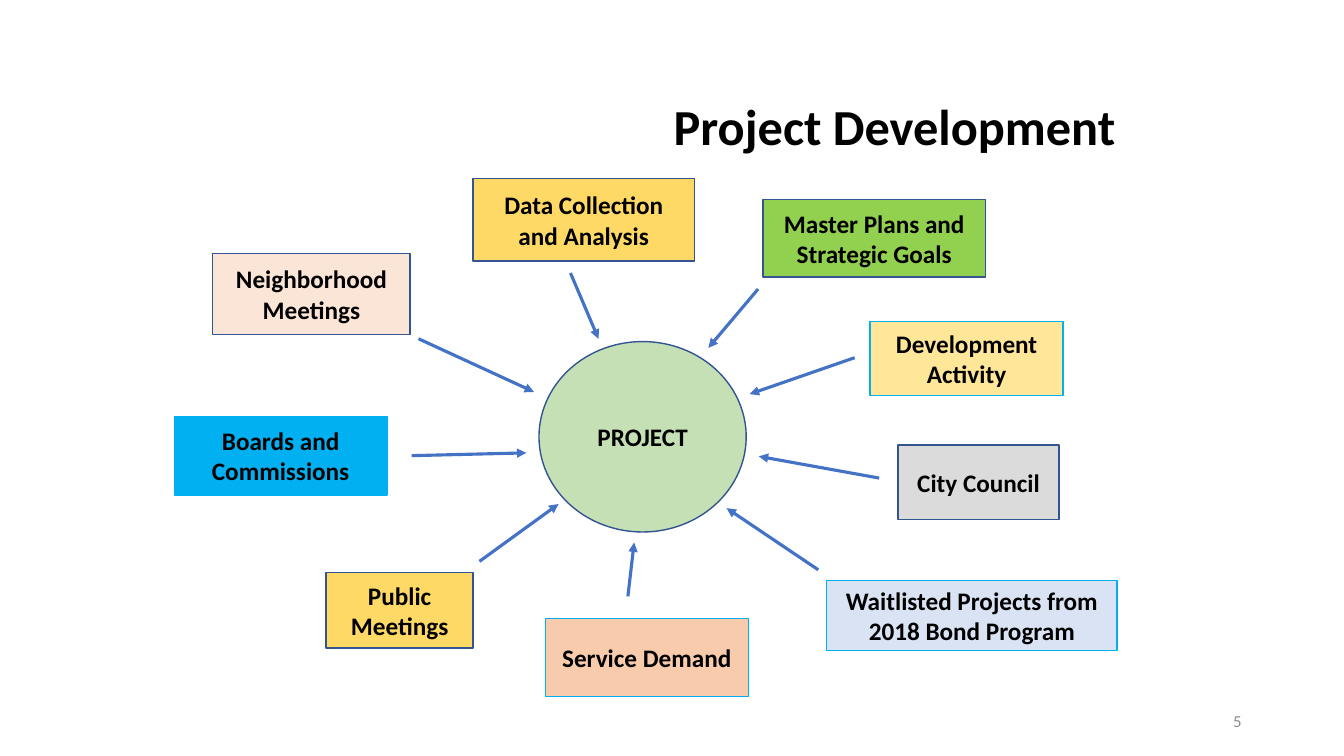
from pptx import Presentation
from pptx.dml.color import RGBColor
from pptx.enum.shapes import MSO_CONNECTOR, MSO_SHAPE
from pptx.enum.text import MSO_ANCHOR, MSO_AUTO_SIZE, PP_ALIGN
from pptx.oxml.ns import qn
from pptx.util import Pt
from lxml.etree import SubElement

NAVY, SKY, BLUE, BLACK = "325491", "00B0F0", "4472C4", "000000"

# Label, fill, outline, box (left, top, width, height), arrow (from x, y, to x, y)
INPUTS = [
    ("Neighborhood Meetings", "FBE5D6", NAVY,
     (28, 54, 141, 58), (175, 115, 257.5, 153)),
    ("Data Collection and Analysis", "FFD966", NAVY,
     (214, 0.5, 158, 59), (283.5, 68, 303.5, 115)),
    ("Master Plans and Strategic Goals", "92D050", NAVY,
     (421, 15.5, 159, 55.5), (417.5, 79.5, 382, 121.5)),
    ("Development Activity", "FFE699", SKY,
     (497.5, 102.5, 138, 53), (486.5, 128.5, 411.5, 154.5)),
    ("City Council", "DBDBDB", NAVY,
     (517.5, 191, 115, 53), (504, 214.5, 418, 199)),
    ("Waitlisted Projects from 2018 Bond Program", "DAE3F3", SKY,
     (466.5, 287.5, 207.5, 50), (460.5, 280, 395, 236)),
    ("Service Demand", "F8CBAD", SKY,
     (265.5, 315, 145, 55.5), (324.5, 299, 329, 260.5)),
    ("Public Meetings", "FFD966", NAVY,
     (109, 282, 105, 54), (218.5, 274, 275, 233)),
    ("Boards and Commissions", SKY, SKY,
     (0.5, 170.5, 152, 56), (170, 198.5, 252, 196.5)),
]
HUB = (261, 117, 148, 136)


def color(code):
    return RGBColor.from_string(code)


def write(frame, text, size, align, code=BLACK, bold=True):
    frame.word_wrap = True
    frame.vertical_anchor = MSO_ANCHOR.MIDDLE
    para = frame.paragraphs[0]
    para.alignment = align
    run = para.add_run()
    run.text = text
    font = run.font
    font.name, font.size, font.bold = "Calibri", Pt(size), bold
    font.color.rgb = color(code)


def node(slide, kind, box, text, fill, edge):
    shape = slide.shapes.add_shape(kind, *map(Pt, box))
    shape.shadow.inherit = False
    shape.fill.solid()
    shape.fill.fore_color.rgb = color(fill)
    shape.line.color.rgb = color(edge)
    shape.line.width = Pt(1)
    write(shape.text_frame, text, 18, PP_ALIGN.CENTER)


def arrow(slide, ends):
    link = slide.shapes.add_connector(MSO_CONNECTOR.STRAIGHT, *map(Pt, ends))
    link.line.color.rgb = color(BLUE)
    link.line.width = Pt(2.25)
    props = link._element.spPr
    SubElement(props.find(qn("a:ln")), qn("a:tailEnd"), type="triangle")
    SubElement(props, qn("a:effectLst"))


def heading(slide, left, top, width, height):
    title = slide.shapes.title
    title.left, title.top = Pt(left), Pt(top)
    title.width, title.height = Pt(width), Pt(height)
    frame = title.text_frame
    frame.auto_size = MSO_AUTO_SIZE.NONE
    write(frame, "Project Development", 36, PP_ALIGN.LEFT)
    frame.vertical_anchor = MSO_ANCHOR.BOTTOM
    frame.paragraphs[0].line_spacing = 0.9


def diagram(slide, left, top):
    # Central project
    x, y, w, h = HUB
    node(slide, MSO_SHAPE.OVAL, (left + x, top + y, w, h),
         "PROJECT", "C5E0B4", NAVY)
    # Inputs around it, each with its arrow
    for text, fill, edge, (x, y, w, h), (x1, y1, x2, y2) in INPUTS:
        node(slide, MSO_SHAPE.RECTANGLE, (left + x, top + y, w, h),
             text, fill, edge)
        arrow(slide, (left + x1, top + y1, left + x2, top + y2))


def footer(slide, left, top, width, height):
    box = slide.shapes.add_textbox(*map(Pt, (left, top, width, height)))
    write(box.text_frame, "5", 12, PP_ALIGN.RIGHT, "8C8C8C", False)


def main():
    deck = Presentation()
    deck.slide_width, deck.slide_height = Pt(960), Pt(540)
    slide = deck.slides.add_slide(deck.slide_layouts.get_by_name("Title Only"))
    heading(slide, 474, 39, 441, 76)
    diagram(slide, 124, 127)
    footer(slide, 678, 500.5, 216, 29)
    deck.save("out.pptx")


if __name__ == "__main__":
    main()
